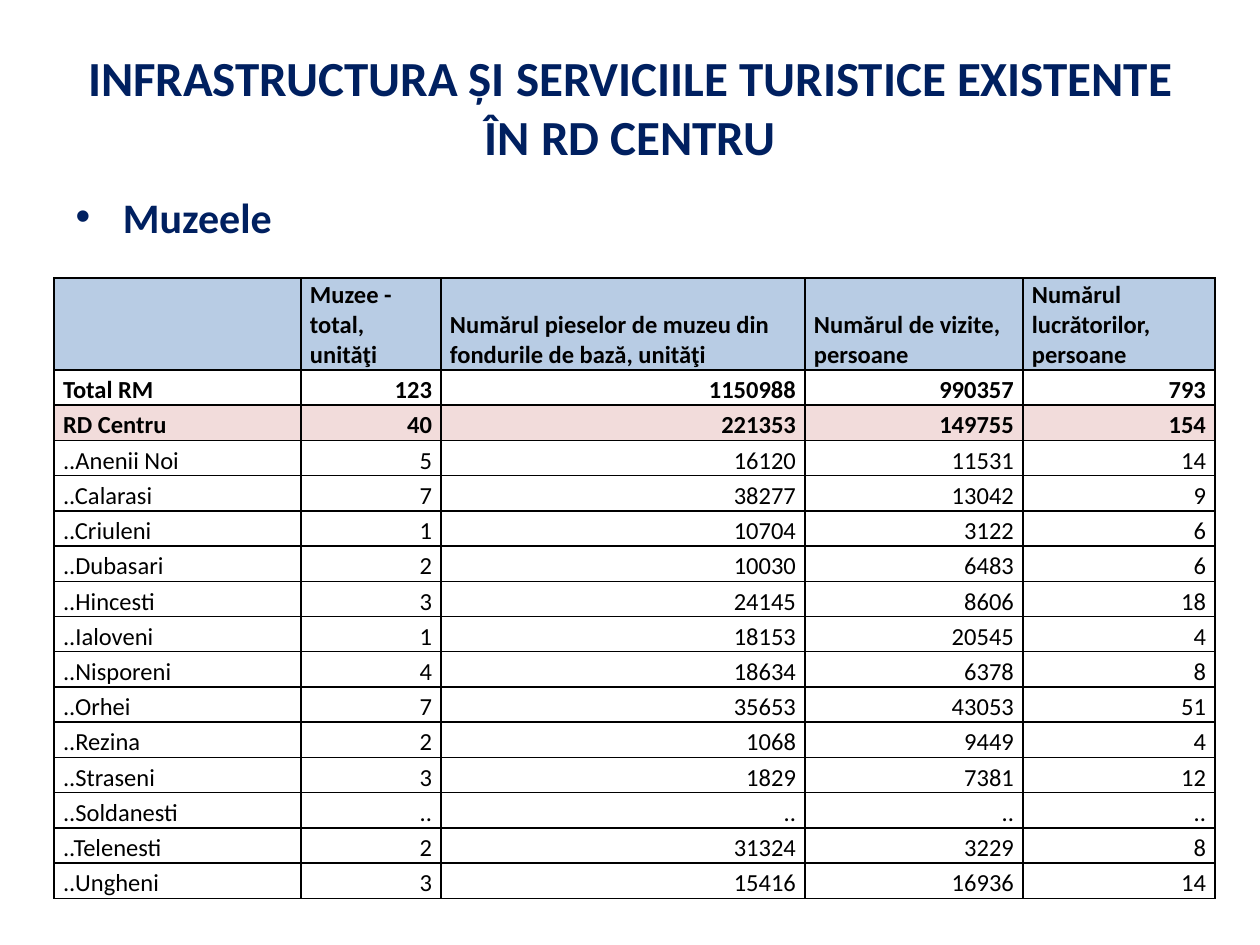
from lxml.etree import SubElement
from pptx import Presentation
from pptx.dml.color import RGBColor
from pptx.enum.text import MSO_ANCHOR as Anchor, PP_ALIGN as Align
from pptx.oxml.ns import qn
from pptx.util import Emu, Pt

TITLE = "INFRASTRUCTURA ȘI SERVICIILE TURISTICE EXISTENTE ÎN RD CENTRU"
TOPIC = "Muzeele"
HEADER = ("", "Muzee - total, unităţi",
          "Numărul pieselor de muzeu din fondurile de bază, unităţi",
          "Numărul de vizite, persoane", "Numărul lucrătorilor, persoane")
MUSEUMS = [
    ("Total RM", "123", "1150988", "990357", "793"),
    ("RD Centru", "40", "221353", "149755", "154"),
    ("..Anenii Noi", "5", "16120", "11531", "14"),
    ("..Calarasi", "7", "38277", "13042", "9"),
    ("..Criuleni", "1", "10704", "3122", "6"),
    ("..Dubasari", "2", "10030", "6483", "6"),
    ("..Hincesti", "3", "24145", "8606", "18"),
    ("..Ialoveni", "1", "18153", "20545", "4"),
    ("..Nisporeni", "4", "18634", "6378", "8"),
    ("..Orhei", "7", "35653", "43053", "51"),
    ("..Rezina", "2", "1068", "9449", "4"),
    ("..Straseni", "3", "1829", "7381", "12"),
    ("..Soldanesti", "..", "..", "..", ".."),
    ("..Telenesti", "2", "31324", "3229", "8"),
    ("..Ungheni", "3", "15416", "16936", "14"),
]
COLORS = {"navy": "002060", "black": "000000", "header": "B8CCE4", "region": "F2DCDB"}
FONT = "Calibri"
ROW_FILLS = {0: "header", 2: "region"}
BOLD_ROWS = 3

PX = 914400 // 126
TITLE_BOX = (63, 38, 1134, 137)
TOPIC_BOX = (63, 185, 1134, 69)
TABLE_LEFT, TABLE_TOP = 54, 278
TABLE_HEIGHT, HEADER_HEIGHT = 621, 92
COLUMN_WIDTHS = (247, 140, 364, 218, 192)
CELL_INSET = 9


def px(length):
    return Emu(round(length * PX))


def style(para, size, color, bold):
    for span in para.runs:
        span.font.name = FONT
        span.font.size = Pt(size)
        span.font.bold = bold
        span.font.color.rgb = RGBColor.from_string(COLORS[color])


def fill_placeholder(box, place, text, size):
    box.left, box.top, box.width, box.height = map(px, place)
    box.text_frame.text = text
    style(box.text_frame.paragraphs[0], size, "navy", True)


def add_borders(cell):
    properties = cell._tc.get_or_add_tcPr()
    for side in ("lnL", "lnR", "lnT", "lnB"):
        line = SubElement(properties, qn(f"a:{side}"), w=str(Pt(1)))
        paint = SubElement(line, qn("a:solidFill"))
        SubElement(paint, qn("a:srgbClr"), val=COLORS["black"])


def format_cell(cell, text, row, column):
    cell.text = text
    cell.vertical_anchor = Anchor.BOTTOM
    cell.margin_left = cell.margin_right = px(CELL_INSET)
    cell.margin_top = cell.margin_bottom = 0
    para = cell.text_frame.paragraphs[0]
    para.alignment = Align.RIGHT if row and column else Align.LEFT
    style(para, 14, "black", row < BOLD_ROWS)
    add_borders(cell)
    if row in ROW_FILLS:
        cell.fill.solid()
        cell.fill.fore_color.rgb = RGBColor.from_string(COLORS[ROW_FILLS[row]])
    else:
        cell.fill.background()


def add_museum_table(page):
    rows = [HEADER, *MUSEUMS]
    frame = page.shapes.add_table(
        len(rows), len(HEADER), px(TABLE_LEFT), px(TABLE_TOP),
        px(sum(COLUMN_WIDTHS)), px(TABLE_HEIGHT))
    table = frame.table
    table.first_row = table.horz_banding = False
    for column, width in zip(table.columns, COLUMN_WIDTHS):
        column.width = px(width)
    body_height = (TABLE_HEIGHT - HEADER_HEIGHT) / len(MUSEUMS)
    for row, values in enumerate(rows):
        table.rows[row].height = px(body_height if row else HEADER_HEIGHT)
        for column, text in enumerate(values):
            format_cell(table.cell(row, column), text, row, column)


def main():
    deck = Presentation()
    deck.slide_width, deck.slide_height = px(1260), px(945)
    page = deck.slides.add_slide(deck.slide_layouts.get_by_name("Title and Content"))
    fill_placeholder(page.shapes.title, TITLE_BOX, TITLE, 28)
    fill_placeholder(page.placeholders[1], TOPIC_BOX, TOPIC, 24)
    add_museum_table(page)
    deck.save("out.pptx")


if __name__ == "__main__":
    main()
